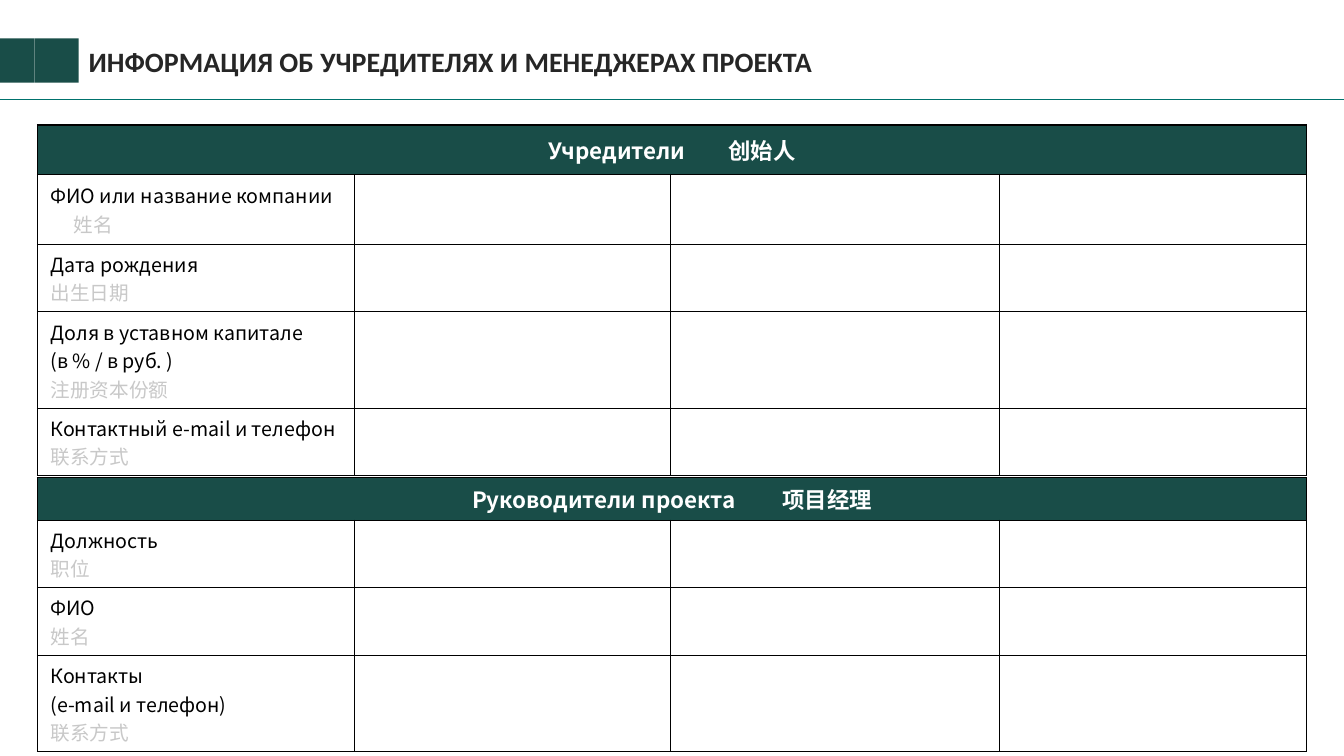
from dataclasses import dataclass

from lxml.etree import SubElement
from pptx import Presentation
from pptx.dml.color import RGBColor
from pptx.enum.shapes import MSO_CONNECTOR, MSO_SHAPE
from pptx.enum.text import MSO_ANCHOR, MSO_AUTO_SIZE, PP_ALIGN
from pptx.oxml.ns import qn
from pptx.util import Inches, Pt

COLORS = {"green": "194D48", "rule": "00726D", "title": "262626",
          "black": "000000", "hint": "C8C8C8", "white": "FFFFFF"}
TITLE_FONT, TABLE_FONT = "Calibri", "Noto Sans CJK SC"
WIDTH, HEIGHT = Inches(13.33), Inches(7.5)

# Table grid, in percent of the slide
TABLE_LEFT, TABLE_WIDTH = 2.78, 94.45
COLUMN_SHARES = (25.0, 24.9, 25.9, 24.2)  # percent of the table width
TWO_LINES, THREE_LINES = 8.95, 12.75


@dataclass
class Field:
    label: str
    hint: str
    height: float
    hint_indent: float = 0


@dataclass
class Section:
    title: str
    hint: str
    gap: int  # points between title and hint
    top: float
    header_height: float
    fields: list[Field]


SECTIONS = [
    Section("Учредители", "创始人", 27, 16.53, 6.53, [
        Field("ФИО или название компании", "姓名", 9.25, 0.23),
        Field("Дата рождения", "出生日期", TWO_LINES),
        Field("Доля в уставном капитале\v(в % / в руб. )", "注册资本份额", THREE_LINES),
        Field("Контактный e-mail и телефон", "联系方式", TWO_LINES),
    ]),
    Section("Руководители проекта", "项目经理", 30, 63.2, 5.6, [
        Field("Должность", "职位", TWO_LINES),
        Field("ФИО", "姓名", TWO_LINES),
        Field("Контакты\v(e-mail и телефон)", "联系方式", THREE_LINES),
    ]),
]


def across(percent: float) -> int:
    return round(WIDTH * percent / 100)


def down(percent: float) -> int:
    return round(HEIGHT * percent / 100)


def rgb(name: str) -> RGBColor:
    return RGBColor.from_string(COLORS[name])


def set_font(p, font: str, size: float, color: str, bold: bool = False) -> None:
    p.font.name, p.font.size, p.font.bold = font, Pt(size), bold
    p.font.color.rgb = rgb(color)
    if font == TABLE_FONT:
        props = p._p.pPr.find(qn("a:defRPr"))
        SubElement(props, qn("a:ea")).set("typeface", font)


def style_cell(cell, fill: str) -> None:
    cell.margin_left = cell.margin_right = Inches(0.13)
    cell.margin_top = cell.margin_bottom = Inches(0.05)
    cell.vertical_anchor = MSO_ANCHOR.MIDDLE
    tc_pr = cell._tc.get_or_add_tcPr()
    for side in ("lnL", "lnR", "lnT", "lnB"):
        line = SubElement(tc_pr, qn(f"a:{side}"), w=str(Pt(1)))
        solid = SubElement(line, qn("a:solidFill"))
        SubElement(solid, qn("a:srgbClr"), val=COLORS["black"])
    cell.fill.solid()
    cell.fill.fore_color.rgb = rgb(fill)


def write_header(cell, section: Section) -> None:
    p = cell.text_frame.paragraphs[0]
    p.alignment = PP_ALIGN.CENTER
    for text in (section.title, " ", section.hint):
        r = p.add_run()
        r.text = text
        if text == " ":  # widen the single space by letter spacing
            r._r.get_or_add_rPr().set("spc", str(section.gap * 100))
    set_font(p, TABLE_FONT, 16, "white", True)


def write_field(cell, field: Field) -> None:
    tf = cell.text_frame
    p = tf.paragraphs[0]
    p.text = field.label
    set_font(p, TABLE_FONT, 14, "black")
    p = tf.add_paragraph()
    p.text = field.hint
    if field.hint_indent:
        p._p.get_or_add_pPr().set("marL", str(Inches(field.hint_indent)))
    set_font(p, TABLE_FONT, 14, "hint")


def add_section(s, section: Section) -> None:
    heights = [section.header_height] + [f.height for f in section.fields]
    table = s.shapes.add_table(
        len(heights), len(COLUMN_SHARES), across(TABLE_LEFT), down(section.top),
        across(TABLE_WIDTH), down(sum(heights))).table
    table.first_row = table.horz_banding = False
    for column, share in zip(table.columns, COLUMN_SHARES):
        column.width = across(TABLE_WIDTH * share / 100)
    for i, (row, height) in enumerate(zip(table.rows, heights)):
        row.height = down(height)
        for cell in row.cells:
            style_cell(cell, "white" if i else "green")
    table.cell(0, 0).merge(table.cell(0, len(COLUMN_SHARES) - 1))
    write_header(table.cell(0, 0), section)
    for i, field in enumerate(section.fields, 1):
        write_field(table.cell(i, 0), field)


def add_block(s, left: float, width: float) -> None:
    sp = s.shapes.add_shape(MSO_SHAPE.RECTANGLE, across(left), down(5.07),
                            across(width), down(5.87))
    sp.shadow.inherit = False
    sp.fill.solid()
    sp.fill.fore_color.rgb = rgb("green")
    sp.line.fill.background()


def add_rule(s) -> None:
    line = s.shapes.add_connector(MSO_CONNECTOR.STRAIGHT, 0, down(13.2),
                                  WIDTH, down(13.2))
    line.line.color.rgb = rgb("rule")
    line.line.width = Pt(0.5)
    SubElement(line._element.spPr, qn("a:effectLst"))


def write_title(s, text: str) -> None:
    sp = s.shapes.title
    sp.left, sp.top = across(5.85), down(4.13)
    sp.width, sp.height = across(71.27), down(8.4)
    tf = sp.text_frame
    tf.word_wrap = True
    tf.auto_size = MSO_AUTO_SIZE.NONE
    tf.vertical_anchor = MSO_ANCHOR.MIDDLE
    p = tf.paragraphs[0]
    p.text = text
    p.alignment = PP_ALIGN.LEFT
    p.line_spacing = 0.9
    set_font(p, TITLE_FONT, 20, "title", True)


def main() -> None:
    prs = Presentation()
    prs.slide_width, prs.slide_height = WIDTH, HEIGHT
    s = prs.slides.add_slide(prs.slide_layouts[5])

    # Heading band
    add_rule(s)
    for left, width in ((0, 2.55), (2.55, 3.3)):
        add_block(s, left, width)
    write_title(s, "ИНФОРМАЦИЯ ОБ УЧРЕДИТЕЛЯХ И МЕНЕДЖЕРАХ ПРОЕКТА")

    # Founders and managers
    for section in SECTIONS:
        add_section(s, section)

    prs.save("out.pptx")


if __name__ == "__main__":
    main()
